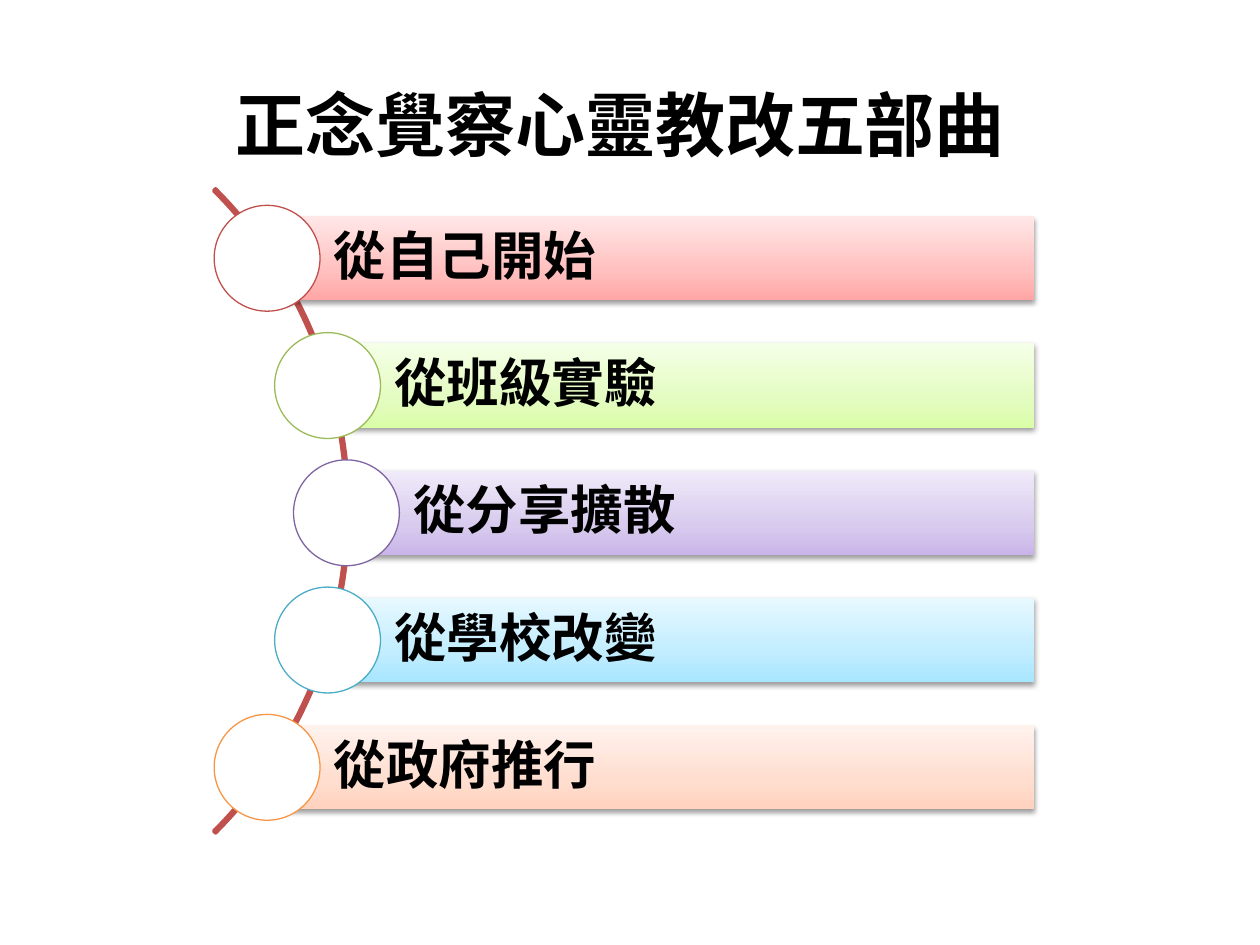
"""Build a slide with five steps set along an arc."""
from dataclasses import dataclass

from pptx import Presentation, util as u
from pptx.dml.color import RGBColor
from pptx.enum import shapes, text
from pptx.oxml import parse_xml
from pptx.oxml.ns import nsdecls

FONT = "Calibri"
RIGHT_EDGE = 8.21
FIRST_CENTER = 2.05
STEP_PITCH = 1.01
BAR_HEIGHT = 0.67
CIRCLE_SIZE = 0.84


@dataclass
class Step:
    label: str
    left: float
    outline: str
    gradient: tuple[str, str, str]


STEPS = [
    Step("從自己開始", 2.12, "C0504D", ("FFA6A5", "FFC0BF", "FFE7E7")),
    Step("從班級實驗", 2.6, "9BBB59", ("DAFDA7", "E4FCC2", "F5FFE7")),
    Step("從分享擴散", 2.75, "8064A2", ("C9B5E8", "D8CBEE", "F0EAF9")),
    Step("從學校改變", 2.6, "4BACC6", ("A7E6FF", "C1EDFF", "E7F8FF")),
    Step("從政府推行", 2.12, "F79646", ("FFD2BD", "FFDED0", "FFF2ED")),
]


def color(value: str) -> RGBColor:
    return RGBColor.from_string(value)


def add_shape(slide, kind, left: float, top: float, width: float, height: float):
    return slide.shapes.add_shape(
        kind, u.Inches(left), u.Inches(top), u.Inches(width), u.Inches(height)
    )


def write_text(frame, label: str, size: int) -> None:
    frame.text = label
    paragraph = frame.paragraphs[0]
    paragraph.alignment = text.PP_ALIGN.LEFT
    font = paragraph.font
    font.name, font.size, font.bold = FONT, u.Pt(size), True
    font.color.rgb = color("000000")


def add_title(slide, label: str) -> None:
    title = slide.shapes.title
    title.left, title.top = u.Inches(1.77), u.Inches(0.6)
    title.width, title.height = u.Inches(6.69), u.Inches(0.77)
    frame = title.text_frame
    frame.auto_size = text.MSO_AUTO_SIZE.NONE
    frame.vertical_anchor = text.MSO_ANCHOR.TOP
    write_text(frame, label, 40)


def set_outline(shape, value: str, width: float) -> None:
    shape.shadow.inherit = False
    shape.line.color.rgb = color(value)
    shape.line.width = u.Pt(width)


def add_arc(slide) -> None:
    arc = add_shape(slide, shapes.MSO_SHAPE.BLOCK_ARC, -4.46, 0.44, 7.23, 7.23)
    for index, value in enumerate((189, 27, 0.003)):
        arc.adjustments[index] = value
    arc.fill.background()
    set_outline(arc, "C0504D", 2)


def style_bar(bar, gradient: tuple[str, str, str]) -> None:
    stops = "".join(
        f'<a:gs pos="{position * 1000}"><a:srgbClr val="{value}"/></a:gs>'
        for position, value in zip((0, 35, 100), gradient)
    )
    properties = bar._element.spPr
    properties.insert(2, parse_xml(
        f'<a:gradFill {nsdecls("a")} rotWithShape="1"><a:gsLst>{stops}</a:gsLst>'
        '<a:lin ang="16200000" scaled="0"/></a:gradFill>'
    ))
    bar.line.fill.background()
    properties.append(parse_xml(
        f'<a:effectLst {nsdecls("a")}><a:outerShdw blurRad="{u.Pt(3.1)}" '
        f'dist="{u.Pt(1.6)}" dir="5400000" rotWithShape="0"><a:srgbClr val="000000">'
        '<a:alpha val="38000"/></a:srgbClr></a:outerShdw></a:effectLst>'
    ))


def add_step(slide, step: Step, center: float) -> None:
    bar = add_shape(slide, shapes.MSO_SHAPE.RECTANGLE, step.left,
                    center - BAR_HEIGHT / 2, RIGHT_EDGE - step.left, BAR_HEIGHT)
    style_bar(bar, step.gradient)
    frame = bar.text_frame
    frame.word_wrap = True
    frame.vertical_anchor = text.MSO_ANCHOR.MIDDLE
    frame.margin_left = u.Inches(0.53)
    frame.margin_top = frame.margin_right = frame.margin_bottom = u.Inches(0.08)
    write_text(frame, step.label, 30)
    frame.paragraphs[0].line_spacing = 0.9

    radius = CIRCLE_SIZE / 2
    circle = add_shape(slide, shapes.MSO_SHAPE.OVAL, step.left - radius,
                       center - radius, CIRCLE_SIZE, CIRCLE_SIZE)
    circle.fill.solid()
    circle.fill.fore_color.rgb = color("FFFFFF")
    set_outline(circle, step.outline, 0.75)


def main() -> None:
    presentation = Presentation()
    presentation.slide_width = u.Inches(10)
    presentation.slide_height = u.Inches(7.5)
    slide = presentation.slides.add_slide(presentation.slide_layouts[5])
    add_title(slide, "正念覺察心靈教改五部曲")
    add_arc(slide)
    for index, step in enumerate(STEPS):
        add_step(slide, step, FIRST_CENTER + index * STEP_PITCH)
    presentation.save("out.pptx")


if __name__ == "__main__":
    main()
